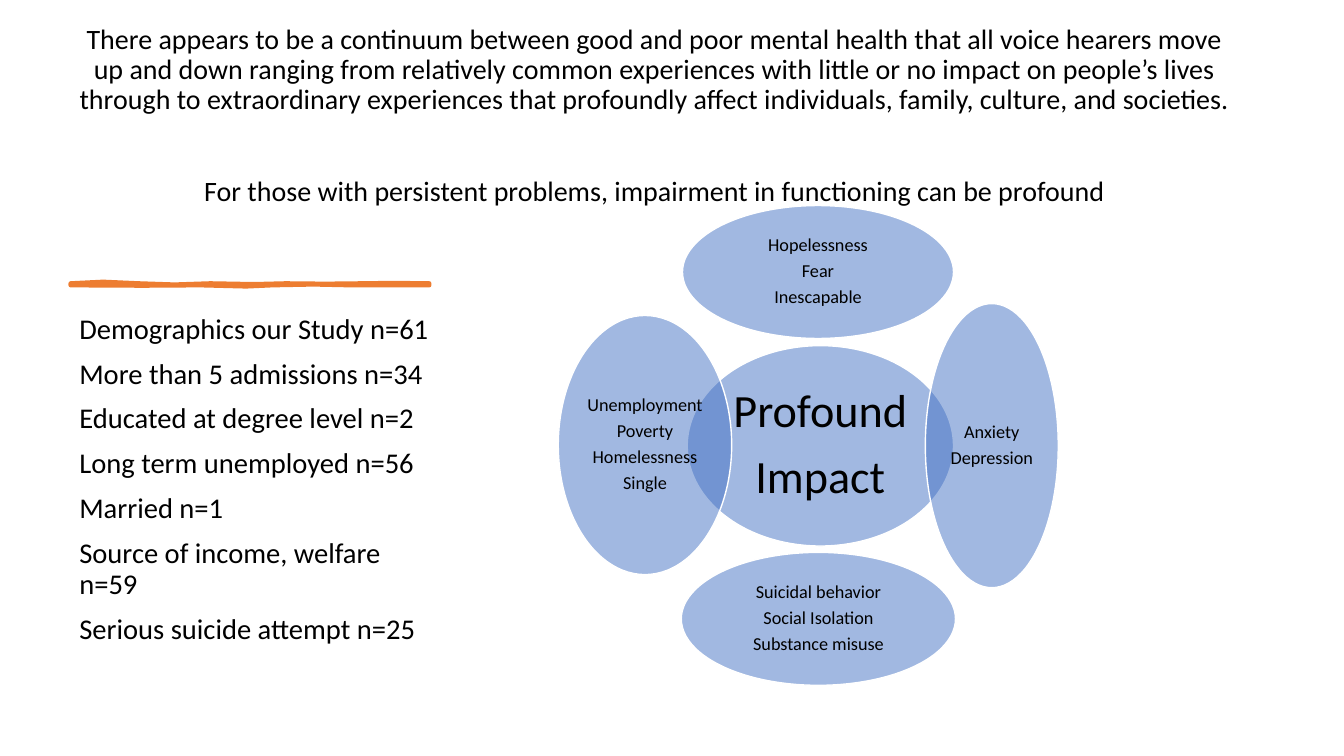
from dataclasses import dataclass

import pptx
import pptx.dml.color
import pptx.enum.shapes
import pptx.enum.text
import pptx.oxml
import pptx.oxml.ns
import pptx.util
from pptx.util import Cm

ALIGN = pptx.enum.text.PP_ALIGN
ANCHOR = pptx.enum.text.MSO_ANCHOR


@dataclass(frozen=True)
class Theme:
    font: str = "Calibri"
    text: str = "000000"
    ellipse: str = "4472C4"
    outline: str = "FFFFFF"
    accent: str = "ED7D31"
    opacity: int = 50
    title_size: float = 20
    body_size: float = 20.4
    center_size: float = 33
    factor_size: float = 13
    line_spacing: float = 0.9


@dataclass(frozen=True)
class Box:
    left: float
    top: float
    width: float
    height: float

    def lengths(self) -> tuple:
        return Cm(self.left), Cm(self.top), Cm(self.width), Cm(self.height)


@dataclass(frozen=True)
class Factor:
    box: Box
    lines: tuple
    size: float
    inset: float = 0.05


THEME = Theme()

TITLE = (
    "There appears to be a continuum between good and poor mental health that all "
    "voice hearers move up and down ranging from relatively common experiences with "
    "little or no impact on people’s lives through to extraordinary experiences that "
    "profoundly affect individuals, family, culture, and societies.",
    "For those with persistent problems, impairment in functioning can be profound",
)
DEMOGRAPHICS = (
    "Demographics our Study n=61",
    "More than 5 admissions n=34",
    "Educated at degree level n=2",
    "Long term unemployed n=56",
    "Married n=1",
    "Source of income, welfare n=59",
    "Serious suicide attempt n=25",
)
FACTORS = (
    Factor(Box(17.32, 8.71, 6.71, 5.05), ("Profound", "Impact"), THEME.center_size, 0.12),
    Factor(Box(17.2, 5.18, 6.83, 3.35), ("Hopelessness", "Fear", "Inescapable"), THEME.factor_size),
    Factor(Box(23.32, 7.65, 3.35, 7.16), ("Anxiety", "Depression"), THEME.factor_size),
    Factor(
        Box(17.17, 13.92, 6.91, 3.35),
        ("Suicidal behavior", "Social Isolation", "Substance misuse"),
        THEME.factor_size,
    ),
    Factor(
        Box(14.07, 7.95, 4.37, 6.53),
        ("Unemployment", "Poverty", "Homelessness", "Single"),
        THEME.factor_size,
    ),
)
BRUSH_STROKE = (
    (1.78, 7.14), (2.6, 7.1), (3.5, 7.14), (4.4, 7.17), (5.3, 7.14), (6.4, 7.16),
    (7.2, 7.14), (8.2, 7.15), (9.12, 7.14), (9.9, 7.13), (10.82, 7.14),
    (10.82, 7.19), (9.8, 7.19), (8.84, 7.19), (7.9, 7.17), (6.86, 7.19),
    (6.2, 7.22), (5.05, 7.19), (3.6, 7.2), (1.78, 7.19),
)


def color(value: str) -> pptx.dml.color.RGBColor:
    return pptx.dml.color.RGBColor.from_string(value)


def write_lines(text_frame, lines: tuple, size: float, alignment, before: float = 0, after: float = 0) -> None:
    text_frame.word_wrap = True
    text_frame.text = "\n".join(lines)
    for index, paragraph in enumerate(text_frame.paragraphs):
        paragraph.alignment = alignment
        paragraph.line_spacing = THEME.line_spacing
        paragraph.space_before = pptx.util.Pt(before if index else 0)
        paragraph.space_after = pptx.util.Pt(after)
        for run in paragraph.runs:
            run.font.name = THEME.font
            run.font.size = pptx.util.Pt(size)
            run.font.color.rgb = color(THEME.text)


def style_shape(shape, fill: str, line: str, line_width: float) -> None:
    shape.shadow.inherit = False
    shape.fill.solid()
    shape.fill.fore_color.rgb = color(fill)
    shape.line.color.rgb = color(line)
    shape.line.width = pptx.util.Pt(line_width)


def add_text(slide, box: Box, lines: tuple, size: float, alignment, anchor, before: float) -> None:
    text_frame = slide.shapes.add_textbox(*box.lengths()).text_frame
    text_frame.vertical_anchor = anchor
    write_lines(text_frame, lines, size, alignment, before=before)


def add_brush_stroke(slide) -> None:
    points = [(Cm(x), Cm(y)) for x, y in BRUSH_STROKE]
    builder = slide.shapes.build_freeform(*points[0])
    builder.add_line_segments(points[1:], close=True)
    shape = builder.convert_to_shape()
    style_shape(shape, THEME.accent, THEME.accent, 3)
    outline = shape._element.spPr.find(pptx.oxml.ns.qn("a:ln"))
    outline.append(pptx.oxml.parse_xml(f"<a:round {pptx.oxml.ns.nsdecls('a')}/>"))


def add_factor(slide, factor: Factor) -> None:
    shape = slide.shapes.add_shape(pptx.enum.shapes.MSO_SHAPE.OVAL, *factor.box.lengths())
    style_shape(shape, THEME.ellipse, THEME.outline, 1)
    fill_color = shape._element.spPr.find(
        f"{pptx.oxml.ns.qn('a:solidFill')}/{pptx.oxml.ns.qn('a:srgbClr')}"
    )
    fill_color.append(
        pptx.oxml.parse_xml(f'<a:alpha {pptx.oxml.ns.nsdecls("a")} val="{THEME.opacity * 1000}"/>')
    )
    text_frame = shape.text_frame
    text_frame.vertical_anchor = ANCHOR.MIDDLE
    text_frame.margin_left = text_frame.margin_right = Cm(factor.inset)
    text_frame.margin_top = text_frame.margin_bottom = Cm(factor.inset)
    write_lines(text_frame, factor.lines, factor.size, ALIGN.CENTER, after=round(factor.size * 0.35, 1))


def main() -> None:
    presentation = pptx.Presentation()
    presentation.slide_width = Cm(33.87)
    presentation.slide_height = Cm(19.05)
    slide = presentation.slides.add_slide(presentation.slide_layouts[6])
    add_text(slide, Box(1.75, 0, 29.49, 5.36), TITLE, THEME.title_size, ALIGN.CENTER, ANCHOR.BOTTOM, 44)
    add_brush_stroke(slide)
    add_text(slide, Box(1.75, 7.8, 9.53, 9.47), DEMOGRAPHICS, THEME.body_size, ALIGN.LEFT, ANCHOR.TOP, 10)
    for factor in FACTORS:
        add_factor(slide, factor)
    presentation.save("out.pptx")


if __name__ == "__main__":
    main()
